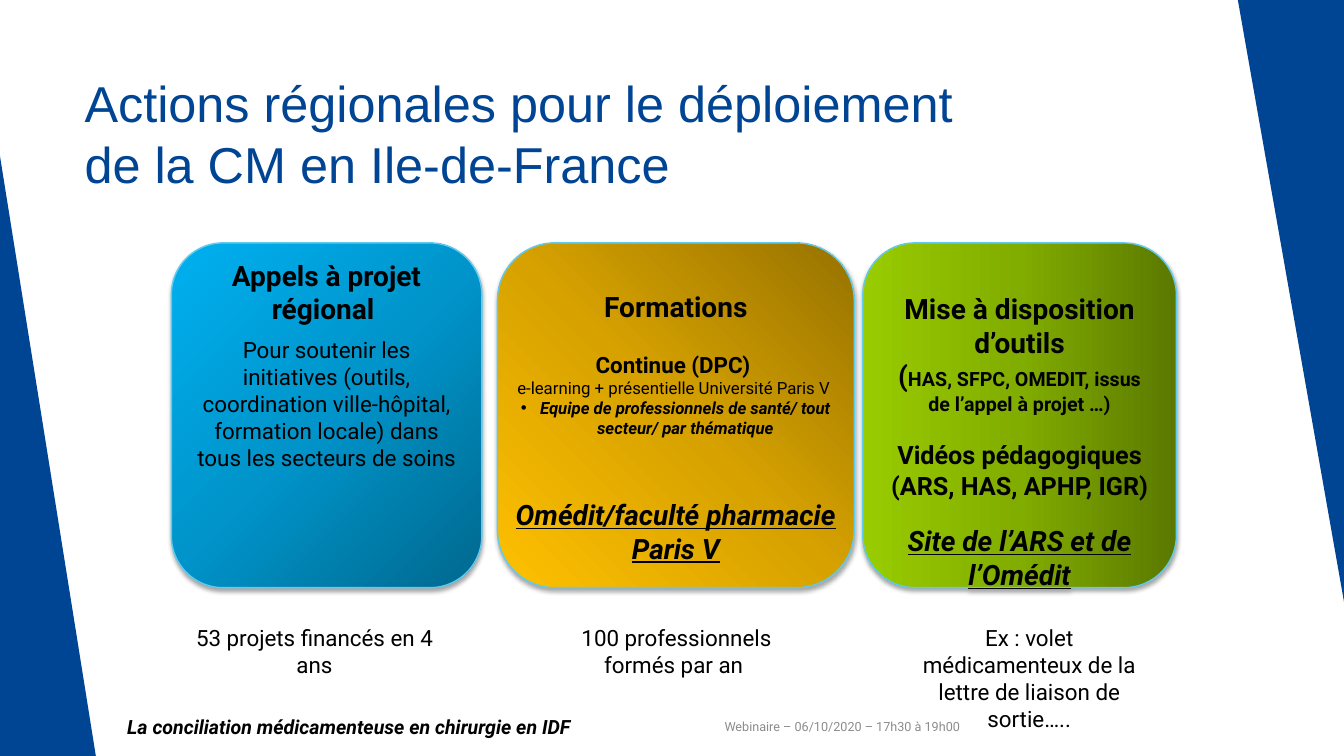
from dataclasses import dataclass

from lxml.etree import SubElement
from pptx import Presentation
from pptx.dml.color import RGBColor
from pptx.enum.shapes import MSO_SHAPE as Shape
from pptx.enum.text import MSO_ANCHOR as Anchor, PP_ALIGN as Align
from pptx.oxml.ns import qn
from pptx.util import Inches, Pt

WIDTH, HEIGHT = Inches(13.333), Inches(7.5)
NAVY = RGBColor(0x00, 0x44, 0x94)
BLACK = RGBColor(0x00, 0x00, 0x00)
GREY = RGBColor(0x8C, 0x8C, 0x8C)
SKY = RGBColor(0x5F, 0xCB, 0xEF)
BLUES = (RGBColor(0x00, 0x68, 0x8E), RGBColor(0x00, 0x94, 0xCA), RGBColor(0x00, 0xB0, 0xF0))
GOLDS = (RGBColor(0x97, 0x72, 0x00), RGBColor(0xD7, 0xA2, 0x00), RGBColor(0xFF, 0xC0, 0x00))
GREENS = (RGBColor(0x5B, 0x79, 0x00), RGBColor(0x81, 0xAC, 0x00), RGBColor(0x99, 0xCC, 0x00))

# Shares of the slide, in percent of its width or height
CARD_TOP, CARD_HEIGHT = 32.13, 45.6
CAPTION_TOP, CAPTION_WIDTH = 81.93, 20.1
FOOTER_TOP, FOOTER_HEIGHT = 93.47, 5.33


@dataclass
class Line:
    text: str
    size: float
    bold: bool = False
    italic: bool = False
    underline: bool = False
    before: float = 0
    bullet: bool = False
    smaller: str = ""
    smaller_size: float = 0
    color: RGBColor = BLACK
    font: str = "Roboto"


def place(left, top, width, height):
    """Turn percentages of the slide into lengths."""
    return (int(WIDTH * left / 100), int(HEIGHT * top / 100),
            int(WIDTH * width / 100), int(HEIGHT * height / 100))


def add_bullet(para):
    settings = para._p.get_or_add_pPr()
    settings.set("marL", str(Inches(0.19)))
    settings.set("indent", str(-Inches(0.19)))
    SubElement(settings, qn("a:buFont"), typeface="Arial")
    SubElement(settings, qn("a:buChar"), char="•")


def write_lines(frame, lines, align):
    frame.word_wrap = True
    for index, line in enumerate(lines):
        para = frame.add_paragraph() if index else frame.paragraphs[0]
        para.text = line.text
        para.alignment = align
        para.space_before = Pt(line.before)
        if line.bullet:
            add_bullet(para)
        if line.smaller:
            para.add_run().text = line.smaller
        for position, span in enumerate(para.runs):
            font = span.font
            font.name = line.font
            font.size = Pt(line.smaller_size if position else line.size)
            font.bold, font.italic = line.bold, line.italic
            font.underline = line.underline
            font.color.rgb = line.color


def add_text(page, area, line, align=Align.LEFT, anchor=Anchor.TOP):
    box = page.shapes.add_textbox(*place(*area))
    write_lines(box.text_frame, [line], align)
    box.text_frame.vertical_anchor = anchor


def add_triangle(page, area, rotation=0):
    triangle = page.shapes.add_shape(Shape.RIGHT_TRIANGLE, *place(*area))
    triangle.rotation = rotation
    triangle.shadow.inherit = False
    triangle.fill.solid()
    triangle.fill.fore_color.rgb = NAVY
    triangle.line.fill.background()


def paint_gradient(shape, colors, dark_corner):
    """Shade from the dark corner (left, top, right, bottom), or from the right side if none."""
    shape.fill.gradient()
    gradient = shape._element.spPr.find(qn("a:gradFill"))
    for child in list(gradient):
        gradient.remove(child)
    stops = SubElement(gradient, qn("a:gsLst"))
    for index, color in enumerate(colors):
        stop = SubElement(stops, qn("a:gs"), pos=str(index * 50000))
        SubElement(stop, qn("a:srgbClr"), val=str(color))
    if dark_corner:
        path = SubElement(gradient, qn("a:path"), path="circle")
        sides = {side: str(share * 1000) for side, share in zip("ltrb", dark_corner)}
        SubElement(path, qn("a:fillToRect"), **sides)
    else:
        SubElement(gradient, qn("a:lin"), ang=str(180 * 60000), scaled="0")


def add_shadow(shape):
    shape.shadow.inherit = False
    effects = shape._element.spPr.find(qn("a:effectLst"))
    shadow = SubElement(effects, qn("a:outerShdw"), blurRad=str(Pt(3)), dist=str(Pt(2)),
                        dir=str(90 * 60000), rotWithShape="0")
    color = SubElement(shadow, qn("a:srgbClr"), val=str(BLACK))
    SubElement(color, qn("a:alpha"), val="35000")


def add_card(page, left, width, colors, lines, dark_corner=None, side=0.1, top=0):
    card = page.shapes.add_shape(Shape.ROUNDED_RECTANGLE,
                                 *place(left, CARD_TOP, width, CARD_HEIGHT))
    paint_gradient(card, colors, dark_corner)
    card.line.color.rgb = SKY
    card.line.width = Pt(1)
    add_shadow(card)
    frame = card.text_frame
    frame.margin_left = frame.margin_right = Inches(side)
    frame.margin_top, frame.margin_bottom = Inches(top), 0
    frame.vertical_anchor = Anchor.TOP
    write_lines(frame, lines, Align.CENTER)


def add_cards(page):
    add_card(page, 37.01, 26.55, GOLDS, [
        Line("Formations", 20, bold=True),
        Line("Continue (DPC) ", 16, bold=True, before=19.5),
        Line("e-learning + présentielle Université Paris V ", 12),
        Line("Equipe de professionnels de santé/ tout secteur/ par thématique", 12,
             bold=True, italic=True, bullet=True),
        Line("Omédit/faculté pharmacie Paris V", 20, bold=True, italic=True,
             underline=True, before=42.5),
    ], dark_corner=(100, 0, 0, 100), side=0, top=0.3)
    add_card(page, 64.2, 23.33, GREENS, [
        Line("Mise à disposition d’outils", 20, bold=True),
        Line("(", 20, bold=True, smaller_size=14,
             smaller="HAS, SFPC, OMEDIT, issus de l’appel à projet …)"),
        Line("Vidéos pédagogiques (ARS, HAS, APHP, IGR)", 18, bold=True, before=17),
        Line("Site de l’ARS et de l’Omédit", 20, bold=True, italic=True,
             underline=True, before=17),
    ], top=0.33)
    add_card(page, 12.75, 23.1, BLUES, [
        Line("Appels à projet régional ", 20, bold=True),
        Line("Pour soutenir les initiatives (outils, coordination ville-hôpital, "
             "formation locale) dans tous les secteurs de soins ", 16, before=8),
    ], dark_corner=(100, 100, 0, 0))


def main():
    deck = Presentation()
    deck.slide_width, deck.slide_height = WIDTH, HEIGHT
    page = deck.slides.add_slide(deck.slide_layouts[6])

    add_triangle(page, (0, 20.67, 7.13, 79.33))
    add_triangle(page, (92.1, 0, 7.9, 79.6), rotation=180)
    add_text(page, (5.55, 8.93, 69.75, 19.2),
             Line("Actions régionales pour le déploiement de la CM en Ile-de-France",
                  36, color=NAVY, font="Arial"))
    add_cards(page)

    captions = (
        (13.35, 8.53, "53 projets financés en 4 ans"),
        (40.28, 8.53, "100 professionnels formés par an "),
        (66.53, 15.73, "Ex : volet médicamenteux de la lettre de liaison de sortie….."),
    )
    for left, height, text in captions:
        add_text(page, (left, CAPTION_TOP, CAPTION_WIDTH, height), Line(text, 16), Align.CENTER)

    add_text(page, (52.65, FOOTER_TOP, 19.5, FOOTER_HEIGHT),
             Line("Webinaire – 06/10/2020 – 17h30 à 19h00", 9, color=GREY),
             Align.RIGHT, Anchor.MIDDLE)
    add_text(page, (8.73, FOOTER_TOP, 40.13, FOOTER_HEIGHT),
             Line("La conciliation médicamenteuse en chirurgie en IDF", 14, bold=True, italic=True),
             anchor=Anchor.MIDDLE)
    deck.save("out.pptx")


if __name__ == "__main__":
    main()
